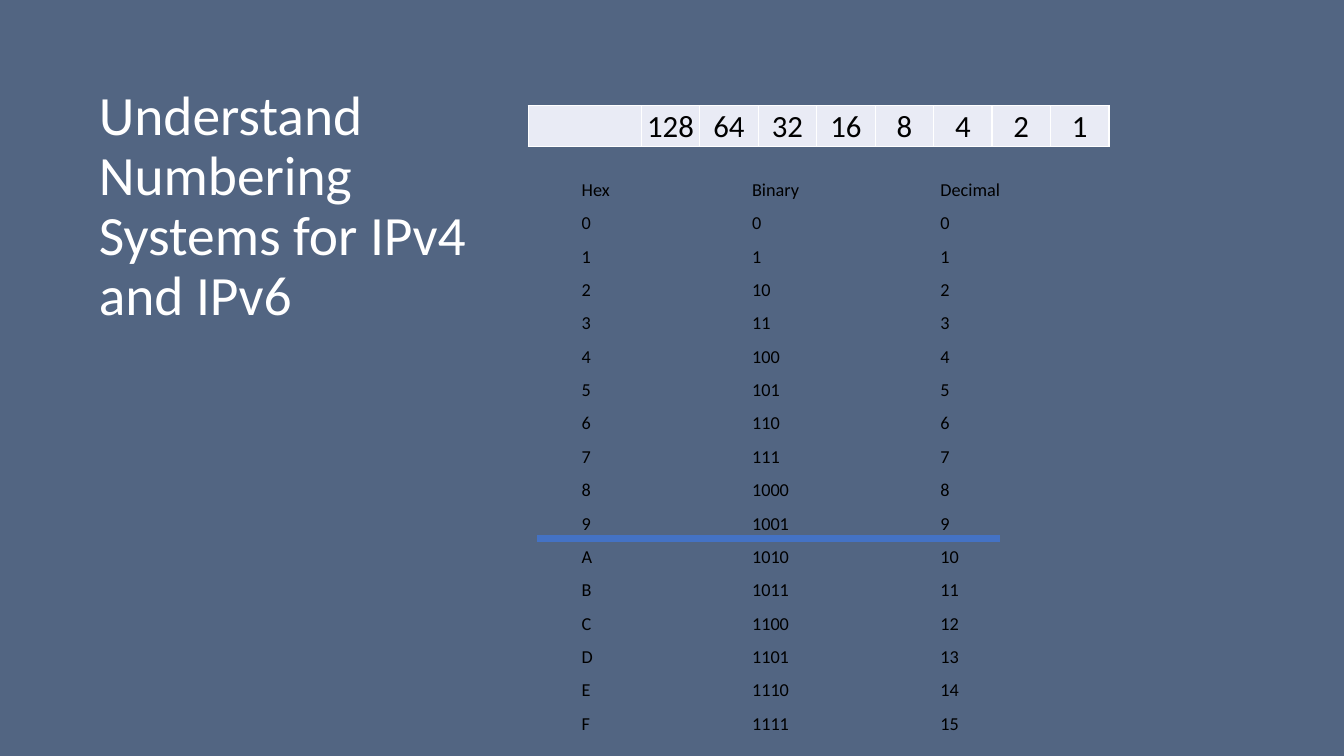
from lxml.etree import SubElement
from pptx import Presentation
from pptx.dml.color import RGBColor
from pptx.enum.shapes import MSO_CONNECTOR
from pptx.enum.text import MSO_ANCHOR, MSO_AUTO_SIZE, PP_ALIGN
from pptx.oxml.ns import qn
from pptx.util import Emu, Pt

SCALE = 9144
FONT = "Calibri"
COLORS = {
    "background": "526582",
    "title": "FFFFFF",
    "text": "000000",
    "strip": "E9EBF5",
    "border": "FFFFFF",
    "divider": "4472C4",
}
NO_STYLE = "{2D5ABB26-0587-4C30-8999-92F81FD0307C}"


def px(length):
    """Turn whole px, 100 to the inch, into EMU."""
    return Emu(length * SCALE)


def color(name):
    """Look up a named colour."""
    return RGBColor.from_string(COLORS[name])


def write(frame, text, size, ink="text", align=PP_ALIGN.LEFT, spacing=None):
    """Put one formatted paragraph into a text frame."""
    para = frame.paragraphs[0]
    para.alignment = align
    para.line_spacing = spacing
    span = para.add_run()
    span.text = text
    span.font.name = FONT
    span.font.size = Pt(size)
    span.font.color.rgb = color(ink)


def set_margins(cell, side, edge):
    """Set the side and the top and bottom margins of a cell."""
    cell.margin_left = cell.margin_right = px(side)
    cell.margin_top = cell.margin_bottom = px(edge)


def set_borders(cell):
    """Draw a one point line on all four sides of a cell."""
    properties = cell._tc.get_or_add_tcPr()
    for side in ("a:lnL", "a:lnR", "a:lnT", "a:lnB"):
        line = SubElement(properties, qn(side), w=str(Pt(1)))
        fill = SubElement(line, qn("a:solidFill"))
        SubElement(fill, qn("a:srgbClr"), val=COLORS["border"])


def add_plain_table(page, box, row_count, widths):
    """Add an unstyled table with equal rows and the given column widths."""
    left, top, width, height = map(px, box)
    frame = page.shapes.add_table(row_count, len(widths), left, top, width, height)
    table = frame.table
    table.first_row = table.horz_banding = False
    frame._element.find(".//" + qn("a:tableStyleId")).text = NO_STYLE
    for column, column_width in zip(table.columns, widths):
        column.width = px(column_width)
    for row in table.rows:
        row.height = Emu(height // row_count)
    return table


def add_title(page, box):
    """Fill the title placeholder."""
    title = page.shapes.title
    title.left, title.top, title.width, title.height = map(px, box)
    frame = title.text_frame
    frame.word_wrap = True
    frame.auto_size = MSO_AUTO_SIZE.NONE
    frame.vertical_anchor = MSO_ANCHOR.TOP
    write(frame, "Understand Numbering Systems for IPv4 and IPv6", 39.6,
          ink="title", spacing=0.9)


def add_number_table(page, box):
    """List 0 to 15 in hex, binary and decimal, with a merged gap column."""
    rows = [("Hex", "Binary", "", "Decimal")]
    rows += [(f"{n:X}", f"{n:b}", "", str(n)) for n in range(16)]
    table = add_plain_table(page, box, len(rows), (169, 169, 17, 320))
    for row, texts in zip(table.rows, rows):
        for cell, text in zip(row.cells, texts):
            cell.fill.background()
            cell.vertical_anchor = MSO_ANCHOR.MIDDLE
            set_margins(cell, 7, 3 if text else 0)
            if text:
                write(cell.text_frame, text, 13)
    table.cell(0, 2).merge(table.cell(len(rows) - 1, 2))


def add_bit_strip(page, box):
    """Show the place values of one byte after a blank cell."""
    bits = [str(2 ** power) for power in reversed(range(8))]
    label_width = 112
    bit_width = (box[2] - label_width) // len(bits)
    table = add_plain_table(page, box, 1, [label_width] + [bit_width] * len(bits))
    for cell, text in zip(table.rows[0].cells, [""] + bits):
        set_borders(cell)
        cell.fill.solid()
        cell.fill.fore_color.rgb = color("strip")
        cell.vertical_anchor = MSO_ANCHOR.BOTTOM
        set_margins(cell, 0, 0)
        if text:
            write(cell.text_frame, text, 22, align=PP_ALIGN.CENTER)


def add_divider(page, box):
    """Draw the line between the digits and the letters."""
    left, top, width, height = map(px, box)
    line = page.shapes.add_connector(
        MSO_CONNECTOR.STRAIGHT, left, top, left + width, top + height)
    line.line.color.rgb = color("divider")
    line.line.width = Pt(5)
    SubElement(line._element.spPr, qn("a:effectLst"))


def main():
    """Build and save the deck."""
    deck = Presentation()
    deck.slide_width, deck.slide_height = px(1333), px(750)
    page = deck.slides.add_slide(deck.slide_layouts[5])
    page.background.fill.solid()
    page.background.fill.fore_color.rgb = color("background")
    add_title(page, (88, 82, 400, 195))
    add_number_table(page, (570, 172, 675, 563))
    add_bit_strip(page, (524, 105, 579, 40))
    add_divider(page, (533, 534, 459, 0))
    deck.save("out.pptx")


if __name__ == "__main__":
    main()
